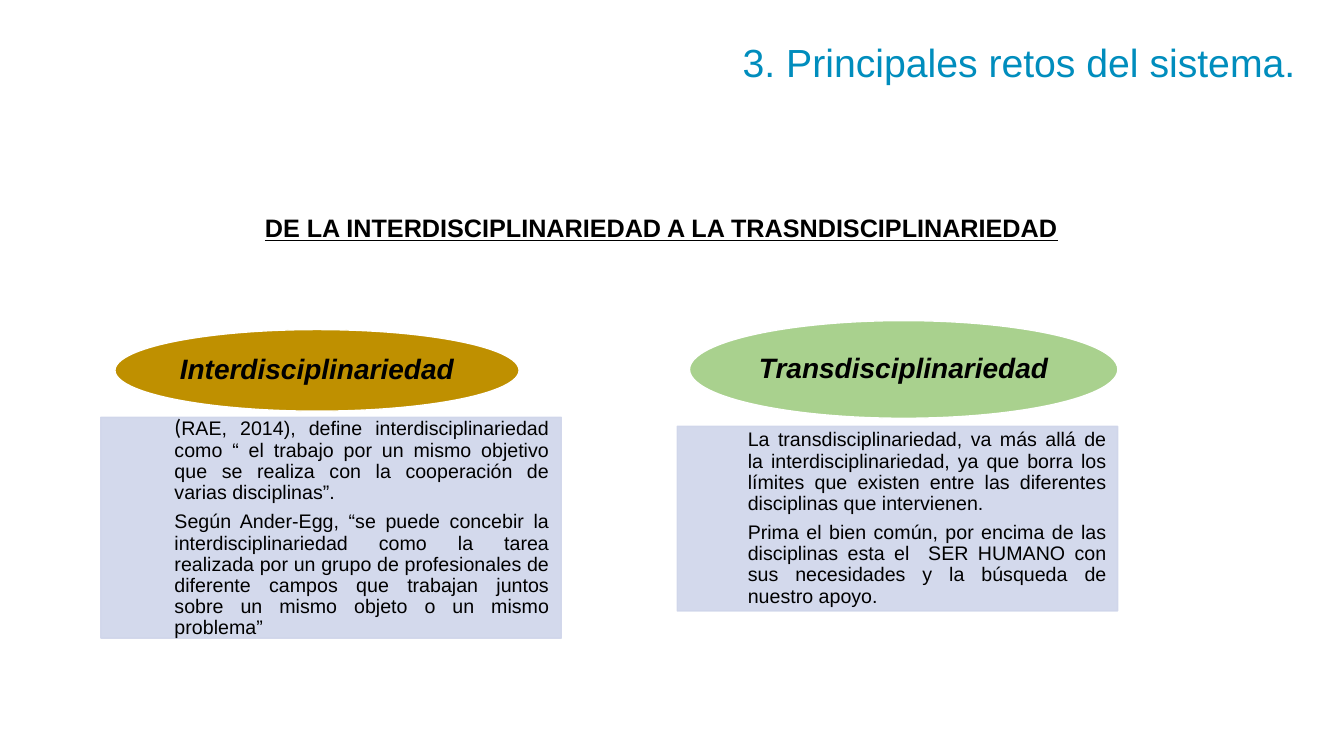
import math
from lxml import etree
from pptx import Presentation
from pptx import util as u
from pptx.dml.color import RGBColor
from pptx.enum import shapes, text
from pptx.oxml.ns import qn

Pt = u.Pt
AL = text.PP_ALIGN
MID = text.MSO_ANCHOR.MIDDLE
ST = shapes.MSO_SHAPE


def paint(color_format, color, alpha=100):
    color_format.rgb = RGBColor.from_string(color)
    if alpha < 100:
        for clr in color_format._xFill.iter(qn("a:srgbClr")):
            etree.SubElement(clr, qn("a:alpha")).set("val", str(alpha * 1000))


def write(box, paras, font, color, frame, para):
    tf = s.shapes.add_textbox(*(Pt(v) for v in box)).text_frame
    for k, v in frame.items():
        setattr(tf, k, v)
    for i, runs in enumerate(paras):
        p = tf.paragraphs[0] if i == 0 else tf.add_paragraph()
        for k, v in para.items():
            setattr(p, k, v)
        for words, extra in runs:
            r = p.add_run()
            r.text = words
            for k, v in {"name": "Arial", **font, **extra}.items():
                setattr(r.font, k, v)
            paint_font = r.font.fill
            paint_font.solid()
            paint(paint_font.fore_color, color)


prs = Presentation()
prs.slide_width, prs.slide_height = Pt(960), Pt(540)
s = prs.slides.add_slide(prs.slide_layouts[6])

grow = {"auto_size": text.MSO_AUTO_SIZE.SHAPE_TO_FIT_TEXT}
write((27.4, 148.3, 889.9, 29), [[("DE LA INTERDISCIPLINARIEDAD A LA TRASNDISCIPLINARIEDAD", {})]],
      {"size": Pt(18), "bold": True, "underline": True}, "000000",
      {"word_wrap": True, **grow}, {"alignment": AL.CENTER})
write((523.4, 23.8, 414, 41), [[("3. Principales retos del sistema.", {})]],
      {"size": Pt(28)}, "008DBD", {"word_wrap": False, **grow}, {"alignment": AL.LEFT})

concepts = [
    ("Interdisciplinariedad", "BF9000", (82.1, 235.4, 288.7, 58.3), (72, 298.1, 329, 157.7), 8.6, [
        [("(", {"name": "Calibri", "size": Pt(16)}),
         ("RAE, 2014), define interdisciplinariedad como “ el trabajo por un mismo objetivo "
          "que se realiza con la cooperación de varias disciplinas”.", {})],
        [("Según Ander-Egg, “se puede concebir la interdisciplinariedad como la tarea realizada "
          "por un grupo de profesionales de diferente campos que trabajan juntos sobre un mismo "
          "objeto o un mismo problema”", {})]]),
    ("Transdisciplinariedad", "A9D18E", (492.5, 229, 306, 69.8), (483.8, 304.6, 314.6, 131.8), 7.9, [
        [("La transdisciplinariedad, va más allá de la interdisciplinariedad, ya que borra los "
          "límites que existen entre las diferentes disciplinas que intervienen.", {})],
        [("Prima el bien común, por encima de las disciplinas esta el  SER HUMANO con sus "
          "necesidades y la búsqueda de nuestro apoyo.", {})]]),
]
indent = 0.16
core = math.sqrt(0.5)

for name, color, oval, panel, inset, paras in concepts:
    x, y, w, h = panel
    ox, oy, ow, oh = oval
    body = (x + w * indent, y, w * (1 - indent), h)
    label = (ox + ow * (1 - core) / 2, oy + oh * (1 - core) / 2, ow * core, oh * core)
    for kind, box, fill, line, alpha, pad, words, font, para in [
        (ST.RECTANGLE, panel, "CFD5EA", "CFD5EA", 90, inset, paras,
         {"size": Pt(14)}, {"alignment": AL.JUSTIFY, "space_after": Pt(5.6)}),
        (ST.OVAL, oval, color, "FFFFFF", 100, 0, [[(name, {})]],
         {"size": Pt(20), "bold": True, "italic": True}, {"alignment": AL.CENTER}),
    ]:
        sp = s.shapes.add_shape(kind, *(Pt(v) for v in box))
        sp.shadow.inherit = False
        sp.line.width = Pt(1)
        for target, shade in ((sp.fill, fill), (sp.line.fill, line)):
            target.solid()
            paint(target.fore_color, shade, alpha)
        frame = {"word_wrap": True, "vertical_anchor": MID, "margin_left": 0,
                 "margin_top": Pt(pad), "margin_right": Pt(pad), "margin_bottom": Pt(pad)}
        write(body if kind == ST.RECTANGLE else label, words, font, "000000", frame,
              {"line_spacing": 0.9, **para})

prs.save("out.pptx")
